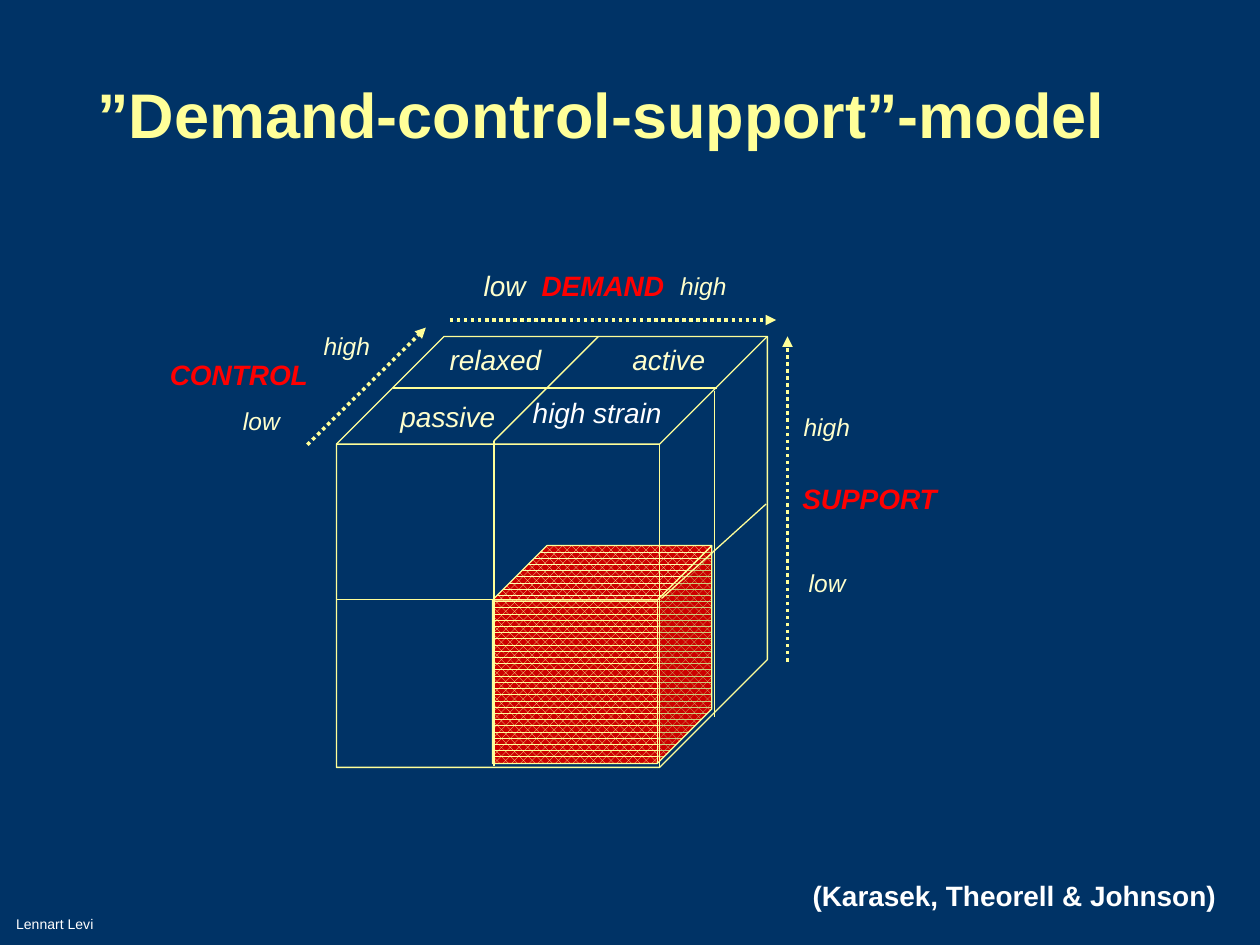
from dataclasses import dataclass

from lxml.etree import SubElement
from pptx import Presentation
from pptx.dml.color import RGBColor
from pptx.enum.dml import MSO_LINE, MSO_PATTERN
from pptx.enum.shapes import MSO_CONNECTOR, MSO_SHAPE
from pptx.enum.text import MSO_ANCHOR, MSO_AUTO_SIZE, PP_ALIGN
from pptx.oxml.ns import qn
from pptx.util import Inches, Pt


@dataclass(frozen=True)
class Theme:
    font: str = "Arial"
    background: RGBColor = RGBColor(0x00, 0x33, 0x66)
    outline: RGBColor = RGBColor(0xFF, 0xFF, 0x99)
    label: RGBColor = RGBColor(0xFF, 0xFF, 0xCC)
    axis: RGBColor = RGBColor(0xFF, 0x00, 0x00)
    strain: RGBColor = RGBColor(0xCC, 0x00, 0x00)
    white: RGBColor = RGBColor(0xFF, 0xFF, 0xFF)
    title_size: int = 36
    large: int = 16
    small: int = 14
    footer_size: int = 8
    thin: float = 0.75
    thick: float = 2


THEME = Theme()

# Text, left, top, width
AXIS_NAMES = [
    ("SUPPORT", 6.27, 3.77, 1.27),
    ("CONTROL", 1.25, 2.79, 1.3),
    ("DEMAND", 4.2, 2.08, 1.17),
]
AXIS_ENDS = [
    ("low", 1.83, 3.17, 0.49),
    ("high", 2.47, 2.58, 0.57),
    ("high", 6.28, 3.22, 0.57),
    ("low", 6.32, 4.46, 0.49),
    ("high", 5.3, 2.1, 0.57),
]
QUADRANTS = [
    ("relaxed", 3.47, 2.67, 0.93),
    ("active", 4.92, 2.67, 0.78),
    ("passive", 3.08, 3.12, 0.95),
]
# Start and end points
DIVIDERS = [
    ((2.67, 4.76), (5.24, 4.76)),
    ((3.12, 3.08), (5.69, 3.08)),
    ((3.92, 3.5), (4.75, 2.67)),
    ((3.92, 3.5), (3.92, 6.08)),
    ((5.67, 3.1), (5.67, 5.69)),
    ((5.25, 4.75), (6.08, 4)),
]
AXES = [
    ((6.25, 5.25), (6.25, 2.67)),
    ((3.57, 2.54), (6.16, 2.54)),
    ((2.44, 3.53), (3.38, 2.6)),
]


def add_run(paragraph, text, size, color, bold=False, italic=False):
    run = paragraph.add_run()
    run.text = text
    font = run.font
    font.name, font.size = THEME.font, Pt(size)
    font.bold, font.italic = bold, italic
    font.color.rgb = color


def add_title(slide, text):
    title = slide.shapes.title
    title.left, title.top = Inches(0.67), Inches(0.5)
    title.width, title.height = Inches(8.5), Inches(0.5)
    frame = title.text_frame
    frame.auto_size = MSO_AUTO_SIZE.NONE
    frame.vertical_anchor = MSO_ANCHOR.TOP
    frame.margin_top = Inches(0.1)
    paragraph = frame.paragraphs[0]
    paragraph.alignment = PP_ALIGN.LEFT
    add_run(paragraph, text, THEME.title_size, THEME.outline, bold=True)


def add_text(slide, text, left, top, width, size, color, height=0.37,
             wrap=False, align=PP_ALIGN.LEFT, bold=False, italic=False):
    box = slide.shapes.add_textbox(
        Inches(left), Inches(top), Inches(width), Inches(height))
    frame = box.text_frame
    frame.word_wrap = wrap
    paragraph = frame.paragraphs[0]
    paragraph.alignment = align
    add_run(paragraph, text, size, color, bold, italic)
    return frame


def add_cube(slide, left, top, width, height):
    cube = slide.shapes.add_shape(
        MSO_SHAPE.CUBE, Inches(left), Inches(top), Inches(width), Inches(height))
    cube.shadow.inherit = False
    cube.fill.background()
    cube.line.color.rgb = THEME.outline
    cube.line.width = Pt(THEME.thin)
    return cube


def add_line(slide, start, end, width):
    line = slide.shapes.add_connector(
        MSO_CONNECTOR.STRAIGHT, *(Inches(value) for value in start + end))
    line.line.color.rgb = THEME.outline
    line.line.width = Pt(width)
    SubElement(line._element.spPr, qn("a:effectLst"))
    return line


def add_axis(slide, start, end):
    axis = add_line(slide, start, end, THEME.thick)
    axis.line.dash_style = MSO_LINE.ROUND_DOT
    SubElement(axis.line._get_or_add_ln(), qn("a:tailEnd"), type="triangle")


def main():
    presentation = Presentation()
    presentation.slide_width, presentation.slide_height = Inches(10), Inches(7.5)
    slide = presentation.slides.add_slide(presentation.slide_layouts[5])
    slide.background.fill.solid()
    slide.background.fill.fore_color.rgb = THEME.background
    add_title(slide, "”Demand-control-support”-model")

    # High-strain block inside the model cube
    strain = add_cube(slide, 3.91, 4.33, 1.74, 1.73)
    strain.fill.patterned()
    strain.fill.pattern = MSO_PATTERN.PERCENT_70
    strain.fill.fore_color.rgb = THEME.outline
    strain.fill.back_color.rgb = THEME.strain
    add_cube(slide, 2.67, 2.67, 3.42, 3.42)
    for start, end in DIVIDERS:
        add_line(slide, start, end, THEME.thin)

    # Axes and their labels
    for start, end in AXES:
        add_axis(slide, start, end)
    for label in AXIS_NAMES:
        add_text(slide, *label, THEME.large, THEME.axis, bold=True, italic=True)
    for label in AXIS_ENDS:
        add_text(slide, *label, THEME.small, THEME.label, height=0.33, italic=True)
    add_text(slide, "low", 3.74, 2.08, 0.54, THEME.large, THEME.label, italic=True)

    # Job types on the top face
    for label in QUADRANTS:
        add_text(slide, *label, THEME.large, THEME.label, italic=True)
    add_text(slide, "high strain", 4.13, 3.09, 1.23, THEME.large, THEME.white,
             italic=True)

    # Source and author
    add_text(slide, "(Karasek, Theorell & Johnson)", 4.58, 6.92, 5.17, THEME.large,
             THEME.white, wrap=True, align=PP_ALIGN.RIGHT, bold=True)
    author = add_text(slide, "Lennart Levi", 0.03, 6.98, 3.17, THEME.footer_size,
                      THEME.white, height=0.5, wrap=True)
    author.vertical_anchor = MSO_ANCHOR.BOTTOM
    author.margin_bottom = Inches(0.08)

    presentation.save("out.pptx")


if __name__ == "__main__":
    main()
